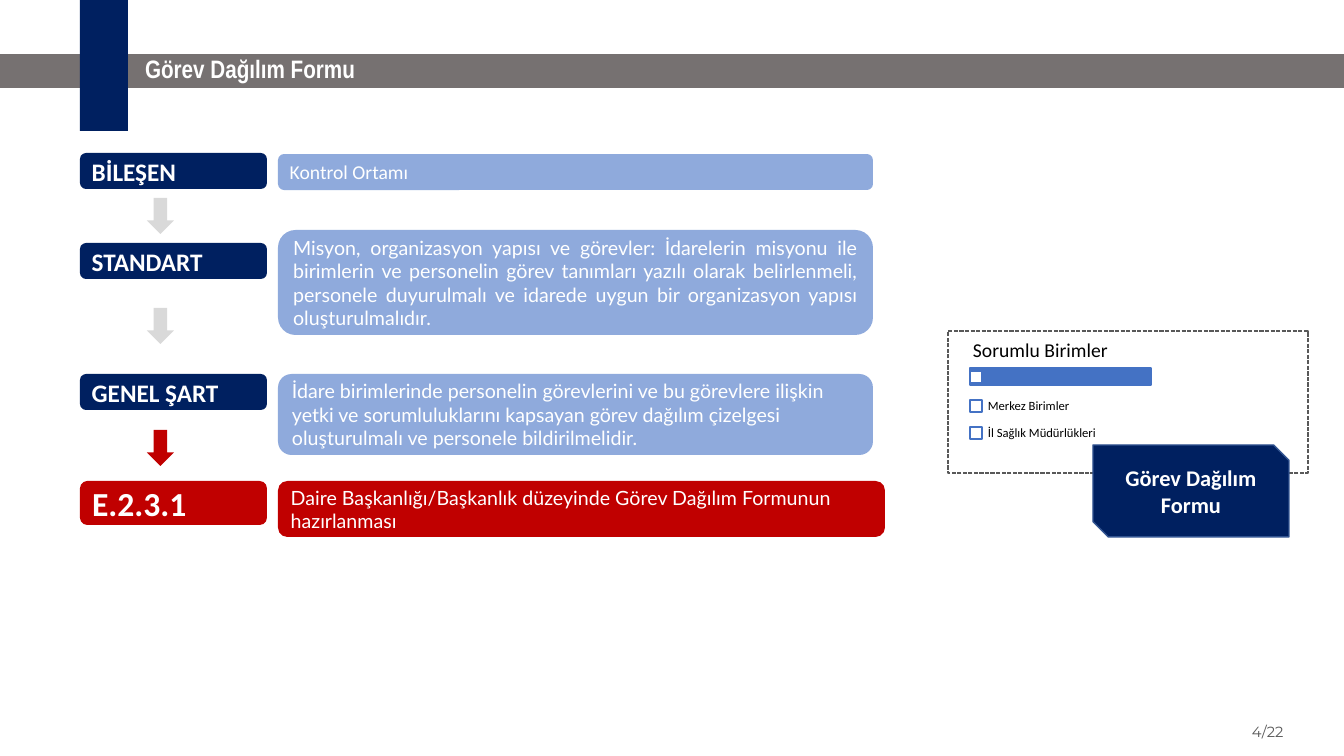
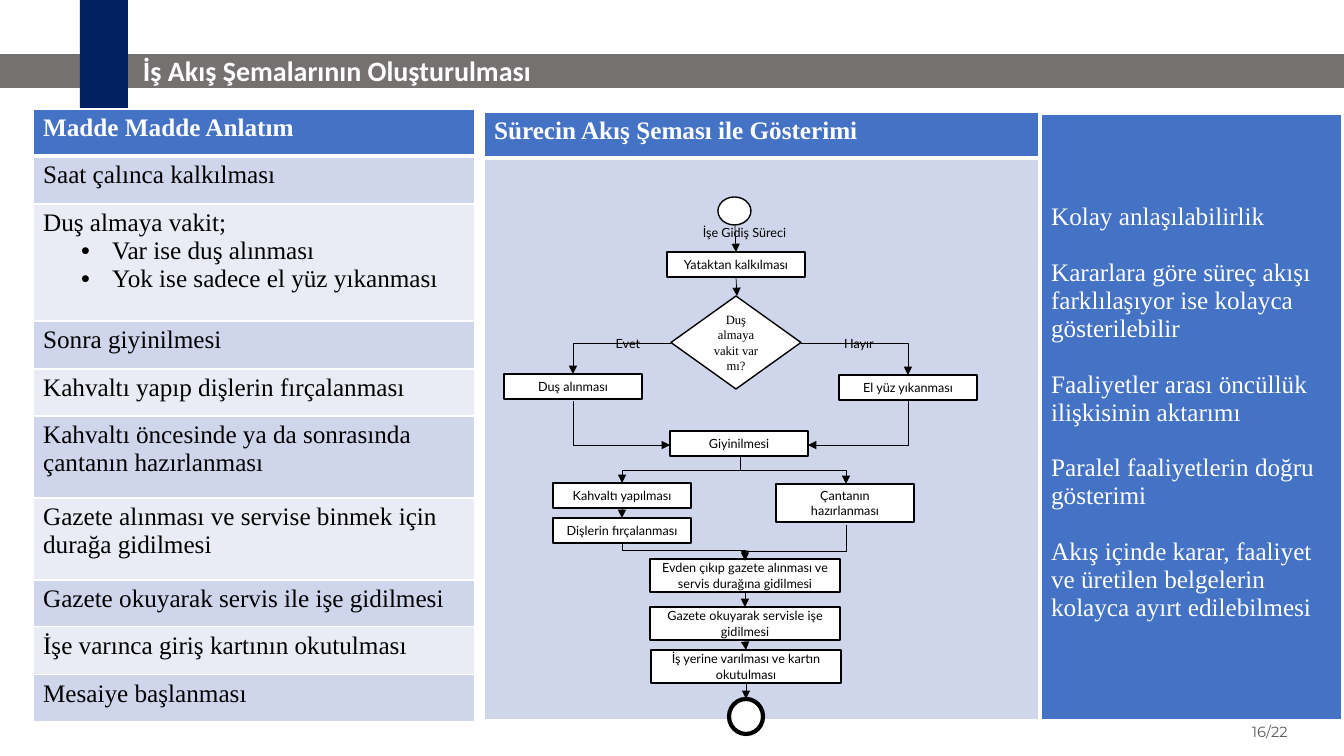
from lxml import etree
from pptx import Presentation
from pptx.dml.color import RGBColor
from pptx.enum import dml, shapes, text
from pptx.oxml.ns import qn
from pptx.util import Emu, Pt

PX = 914400 / 100.8
NAVY = RGBColor(0x00, 0x20, 0x60)
GREY = RGBColor(0x76, 0x71, 0x71)
DARK = RGBColor(0x59, 0x59, 0x59)
PALE = RGBColor(0xD9, 0xD9, 0xD9)
RED = RGBColor(0xC0, 0x00, 0x00)
SKY = RGBColor(0x8F, 0xAA, 0xDC)
BLUE = RGBColor(0x44, 0x72, 0xC4)
EDGE = RGBColor(0x32, 0x54, 0x91)
BAND_A = RGBColor(0xCF, 0xD5, 0xEA)
BAND_B = RGBColor(0xE9, 0xEB, 0xF5)
WHITE = RGBColor(0xFF, 0xFF, 0xFF)
BLACK = RGBColor(0x00, 0x00, 0x00)
SERIF = "Times New Roman"
SHAPE = shapes.MSO_SHAPE
LEFT, CENTER, JUSTIFY = (text.PP_ALIGN.LEFT, text.PP_ALIGN.CENTER,
                         text.PP_ALIGN.JUSTIFY)
TOP, MIDDLE = text.MSO_ANCHOR.TOP, text.MSO_ANCHOR.MIDDLE


def px(n):
    return Emu(round(n * PX))


# Shared helpers
def add_run(p, words, size, font, color, bold=False):
    r = p.add_run()
    r.text = words
    r.font.size, r.font.name, r.font.bold = Pt(size), font, bold
    r.font.color.rgb = color


def write(sp, words, size, font, color, bold=False, align=LEFT,
          anchor=MIDDLE, inset=(10, 5), spacing=None):
    tf = sp.text_frame
    tf.word_wrap = True
    tf.vertical_anchor = anchor
    tf.margin_left = tf.margin_right = px(inset[0])
    tf.margin_top = tf.margin_bottom = px(inset[1])
    p = tf.paragraphs[0]
    p.alignment = align
    if spacing:
        p.line_spacing = spacing
    add_run(p, words, size, font, color, bold)


def add_shape(s, kind, box, fill, line=None, width=1):
    sp = s.shapes.add_shape(kind, *map(px, box))
    sp.shadow.inherit = False
    sp.fill.solid()
    sp.fill.fore_color.rgb = fill
    if line is None:
        sp.line.fill.background()
    else:
        sp.line.color.rgb = line
        sp.line.width = Pt(width)
    return sp


def add_text(s, box, *args, **kwargs):
    write(s.shapes.add_textbox(*map(px, box)), *args, **kwargs)


def add_link(s, start, end, bend=0, down=False, adj=None):
    """Arrow with no bend, one bend or two; down leaves vertically."""
    (x1, y1), (x2, y2) = start, end
    if down:
        # Lay the box on its side around the same centre, then turn it
        w, h = abs(x2 - x1), abs(y2 - y1)
        left, top = (x1 + x2 - h) / 2, (y1 + y2 - w) / 2
        rise = (top + w, top) if x2 > x1 else (top, top + w)
        x1, y1, x2, y2 = left, rise[0], left + h, rise[1]
    kind = shapes.MSO_CONNECTOR.ELBOW if bend else shapes.MSO_CONNECTOR.STRAIGHT
    c = s.shapes.add_connector(kind, *map(px, (x1, y1, x2, y2)))
    c.line.color.rgb = BLACK
    c.line.width = Pt(0.5)
    pr = c._element.spPr
    if down:
        pr.find(qn("a:xfrm")).set("rot", "5400000")
    geom = pr.find(qn("a:prstGeom"))
    if bend == 1:
        geom.set("prst", "bentConnector2")
    if adj:
        etree.SubElement(geom.find(qn("a:avLst")), qn("a:gd"),
                         name="adj1", fmla=f"val {adj}")
    etree.SubElement(pr.find(qn("a:ln")), qn("a:tailEnd"), type="triangle")
    etree.SubElement(pr, qn("a:effectLst"))


def add_table(s, x, y, cols, rows):
    shape = s.shapes.add_table(len(rows), len(cols),
                               *map(px, (x, y, sum(cols), sum(rows))))
    table = shape.table
    table.first_row = table.horz_banding = False
    for col, w in zip(table.columns, cols):
        col.width = px(w)
    for row, h in zip(table.rows, rows):
        row.height = px(h)
    return table


def style_cell(cell, fill, bottom=1):
    pr = cell._tc.get_or_add_tcPr()
    for side, width in zip("LRTB", (1, 1, 1, bottom)):
        ln = etree.SubElement(pr, qn(f"a:ln{side}"), w=str(Pt(width)))
        paint = etree.SubElement(ln, qn("a:solidFill"))
        etree.SubElement(paint, qn("a:srgbClr"), val=str(WHITE))
    cell.fill.solid()
    cell.fill.fore_color.rgb = fill


def add_bullet(p, indent, hang):
    pr = p._p.get_or_add_pPr()
    pr.set("marL", str(px(indent)))
    pr.set("indent", str(-px(hang)))
    etree.SubElement(pr, qn("a:buFont"), typeface="Arial")
    etree.SubElement(pr, qn("a:buChar"), char="•")


def add_frame(prs, title, box, size, font, page):
    s = prs.slides.add_slide(prs.slide_layouts[6])
    add_text(s, (1242, 718, 91, 40), page, 10.5, "Montserrat", DARK, anchor=TOP)
    add_shape(s, SHAPE.RECTANGLE, (0, 54, 1344, 34), GREY)
    add_shape(s, SHAPE.RECTANGLE, (80, 0, 48, 131), NAVY)
    add_text(s, box, title, size, font, WHITE, bold=True, spacing=0.9)
    return s


# Slide 1: levels from component down to action
def add_levels(s, x, y):
    levels = [  # label, y, height, fill, size
        ("BİLEŞEN", 0, 36, NAVY, 18),
        ("STANDART", 90, 36, NAVY, 18),
        ("GENEL ŞART", 221, 36, NAVY, 18),
        ("E.2.3.1", 328, 44, RED, 24)]
    details = [  # text, y, width, height, fill, font, alignment
        ("Kontrol Ortamı", 1, 595, 36, SKY, "Calibri", LEFT),
        ("Misyon, organizasyon yapısı ve görevler: İdarelerin misyonu ile "
         "birimlerin ve personelin görev tanımları yazılı olarak belirlenmeli, "
         "personele duyurulmalı ve idarede uygun bir organizasyon yapısı "
         "oluşturulmalıdır.", 77, 595, 105, SKY, "Lato", JUSTIFY),
        ("İdare birimlerinde personelin görevlerini ve bu görevlere ilişkin "
         "yetki ve sorumluluklarını kapsayan görev dağılım çizelgesi "
         "oluşturulmalı ve personele bildirilmelidir.",
         221, 595, 81, SKY, "Lato", LEFT),
        ("Daire Başkanlığı/Başkanlık düzeyinde Görev Dağılım Formunun "
         "hazırlanması", 328, 607, 56, RED, "Lato", LEFT)]
    for label, dy, h, fill, size in levels:
        sp = add_shape(s, SHAPE.ROUNDED_RECTANGLE, (x, y + dy, 187, h), fill)
        write(sp, label, size, "Calibri", WHITE, bold=True)
    for words, dy, w, h, fill, font, align in details:
        sp = add_shape(s, SHAPE.ROUNDED_RECTANGLE, (x + 198, y + dy, w, h), fill)
        write(sp, words, 14, font, WHITE, align=align)
    for dy, fill in ((45, PALE), (155, PALE), (277, RED)):
        add_shape(s, SHAPE.DOWN_ARROW, (x + 67, y + dy, 27, 36), fill)


# Slide 1: responsible units and the form
def add_units(s, x, y):
    panel = add_shape(s, SHAPE.RECTANGLE, (x, y, 360, 142), WHITE, DARK)
    panel.line.dash_style = dml.MSO_LINE.SQUARE_DOT
    add_text(s, (x + 22, y + 4, 196, 33), "Sorumlu Birimler", 14, "Calibri",
             BLACK, inset=(3, 2), spacing=0.9)
    add_shape(s, SHAPE.RECTANGLE, (x + 22, y + 37, 181, 17), BLUE, BLUE)
    for dy in (40, 69, 96):
        add_shape(s, SHAPE.RECTANGLE, (x + 22, y + dy, 12, 12), WHITE, BLUE)
    for i, unit in enumerate(("Merkez Birimler", "İl Sağlık Müdürlükleri")):
        add_text(s, (x + 33, y + 62 + 27 * i, 147, 27), unit, 9, "Calibri",
                 BLACK, inset=(7, 7), spacing=0.9)
    form = add_shape(s, SHAPE.SNIP_2_DIAG_RECTANGLE,
                     (x + 145, y + 114, 196, 92), NAVY, EDGE)
    write(form, "Görev Dağılım Formu", 16, "Calibri", WHITE, bold=True,
          align=CENTER)


# Slide 2: process told step by step
def add_steps(s, x, y):
    steps = [
        ("Madde Madde Anlatım", 47),
        ("Saat çalınca kalkılması", 48),
        ("Duş almaya vakit;", 117),
        ("Sonra giyinilmesi", 48),
        ("Kahvaltı yapıp dişlerin fırçalanması", 47),
        ("Kahvaltı öncesinde ya da sonrasında çantanın hazırlanması", 82),
        ("Gazete alınması ve servise binmek için durağa gidilmesi", 82),
        ("Gazete okuyarak servis ile işe gidilmesi", 47),
        ("İşe varınca giriş kartının okutulması", 48),
        ("Mesaiye başlanması", 47)]
    choices = ("Var ise duş alınması", "Yok ise sadece el yüz yıkanması")
    table = add_table(s, x, y, [442], [h for _, h in steps])
    for i, (words, _) in enumerate(steps):
        cell, head = table.cell(i, 0), i == 0
        style_cell(cell, BLUE if head else BAND_A if i % 2 else BAND_B,
                   3 if head else 1)
        add_run(cell.text_frame.paragraphs[0], words, 18, SERIF,
                WHITE if head else BLACK, head)
    for words in choices:
        p = table.cell(2, 0).text_frame.add_paragraph()
        add_bullet(p, 69, 31)
        add_run(p, words, 18, SERIF, BLACK)


# Slide 2: panel behind the flow chart
def add_flow_panel(s, x, y):
    table = add_table(s, x, y, [555, 305], [46, 562])
    table.cell(0, 1).merge(table.cell(1, 1))
    for row, col, fill, bottom in ((0, 0, BLUE, 3), (0, 1, BLUE, 3),
                                   (1, 0, BAND_A, 1), (1, 1, BLUE, 1)):
        style_cell(table.cell(row, col), fill, bottom)
    add_run(table.cell(0, 0).text_frame.paragraphs[0],
            "Sürecin Akış Şeması ile Gösterimi", 18, SERIF, WHITE, True)


# Slide 2: flow chart
def add_flow(s, x, y):
    def place(dx, dy, w, h):
        return x + dx, y + dy, w, h

    steps = [  # text, x, y, width, height
        ("Yataktan kalkılması", 183, 92, 138, 25),
        ("Duş alınması", 20, 214, 138, 25),
        ("El yüz yıkanması", 355, 215, 138, 25),
        ("Giyinilmesi", 186, 271, 138, 25),
        ("Kahvaltı yapılması", 69, 323, 138, 25),
        ("Çantanın hazırlanması", 292, 324, 138, 38),
        ("Dişlerin fırçalanması", 69, 358, 138, 25),
        ("Evden çıkıp gazete alınması ve servis durağına gidilmesi",
         166, 399, 190, 33),
        ("Gazete okuyarak servisle işe gidilmesi", 166, 447, 190, 33),
        ("İş yerine varılması ve kartın okutulması", 167, 490, 190, 33)]
    links = [  # start, end, bends, leaves downwards, bend position
        ((251, 66), (252, 92)),
        ((252, 117), (253, 136)),
        ((187, 183), (89, 214), 1),
        ((317, 183), (424, 215), 1),
        ((89, 241), (186, 285), 1, True),
        ((424, 241), (324, 285), 1, True),
        ((256, 297), (138, 323), 2, True),
        ((256, 297), (362, 324), 2, True),
        ((138, 348), (138, 358)),
        ((138, 382), (261, 399), 2, True),
        ((362, 365), (261, 401), 2, True, 74100),
        ((261, 433), (261, 447)),
        ((261, 480), (262, 490)),
        ((262, 523), (262, 539))]
    notes = [("İşe Gidiş Süreci", 162, 59, 197, 26),
             ("Evet", 115, 170, 58, 26),
             ("Hayır", 346, 170, 58, 26)]
    add_shape(s, SHAPE.OVAL, place(234, 37, 33, 28), WHITE, BLACK)
    add_shape(s, SHAPE.OVAL, place(245, 539, 34, 35), WHITE, BLACK, 3)
    choice = add_shape(s, SHAPE.FLOWCHART_DECISION, place(187, 136, 130, 93),
                       WHITE, BLACK)
    write(choice, "Duş almaya vakit var mı?", 9, SERIF, BLACK, align=CENTER)
    for words, *box in steps:
        sp = add_shape(s, SHAPE.RECTANGLE, place(*box), WHITE, BLACK)
        write(sp, words, 9, "Lato", BLACK, align=CENTER)
    for (x1, y1), (x2, y2), *route in links:
        add_link(s, (x + x1, y + y1), (x + x2, y + y2), *route)
    for words, *box in notes:
        add_text(s, place(*box), words, 9, "Lato", BLACK, align=CENTER)


# Slide 2: benefits of the chart
def add_benefits(s, x, y):
    benefits = [
        "Kolay anlaşılabilirlik",
        "Kararlara göre süreç akışı farklılaşıyor ise kolayca gösterilebilir",
        "Faaliyetler arası öncüllük ilişkisinin aktarımı",
        "Paralel faaliyetlerin doğru gösterimi",
        "Akış içinde karar, faaliyet ve üretilen belgelerin kolayca ayırt "
        "edilebilmesi"]
    cell = add_table(s, x, y, [301], [607]).cell(0, 0)
    style_cell(cell, BLUE, 3)
    cell.margin_top = px(89)
    tf = cell.text_frame
    for i, words in enumerate(benefits):
        p = tf.add_paragraph() if i else tf.paragraphs[0]
        if i:
            p.space_before = Pt(20)
        add_run(p, words, 18, SERIF, WHITE)


def main():
    prs = Presentation()
    prs.slide_width, prs.slide_height = px(1344), px(756)

    s = add_frame(prs, "Görev Dağılım Formu", (135, 42, 1161, 57), 18,
                  "Arial Narrow", "4/22")
    add_levels(s, 80, 153)
    add_units(s, 948, 331)

    s = add_frame(prs, "İş Akış Şemalarının Oluşturulması",
                  (133, 55, 1079, 34), 20, "Calibri", "16/22")
    add_flow_panel(s, 484, 112)
    add_flow(s, 484, 160)
    add_benefits(s, 1041, 114)
    add_steps(s, 33, 109)

    prs.save("out.pptx")


if __name__ == "__main__":
    main()
